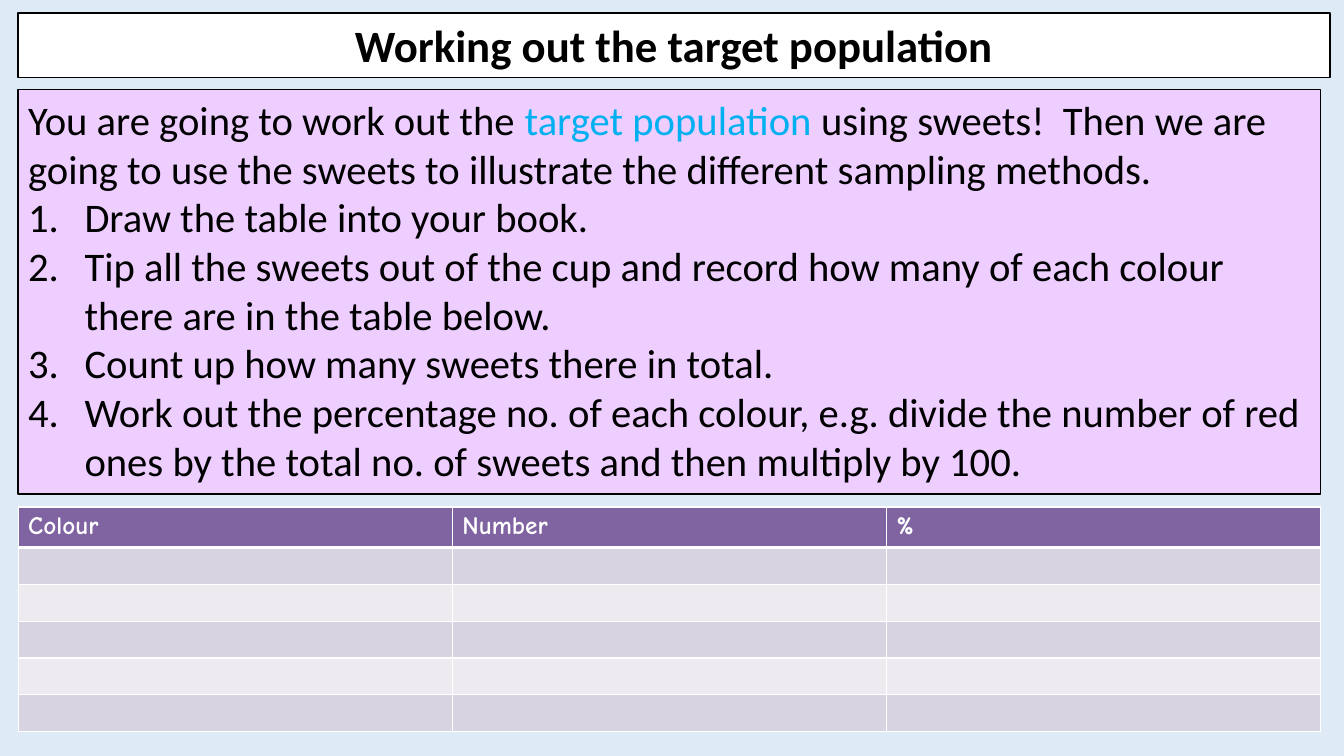
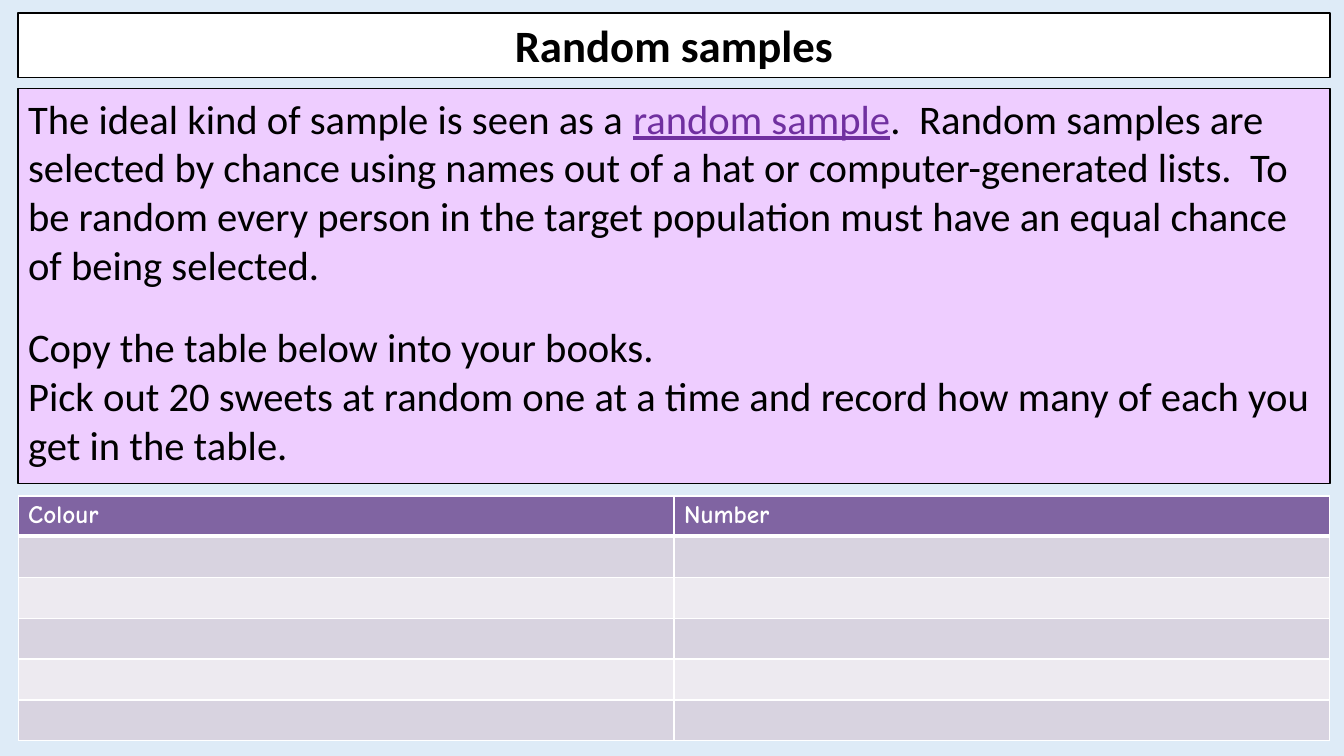
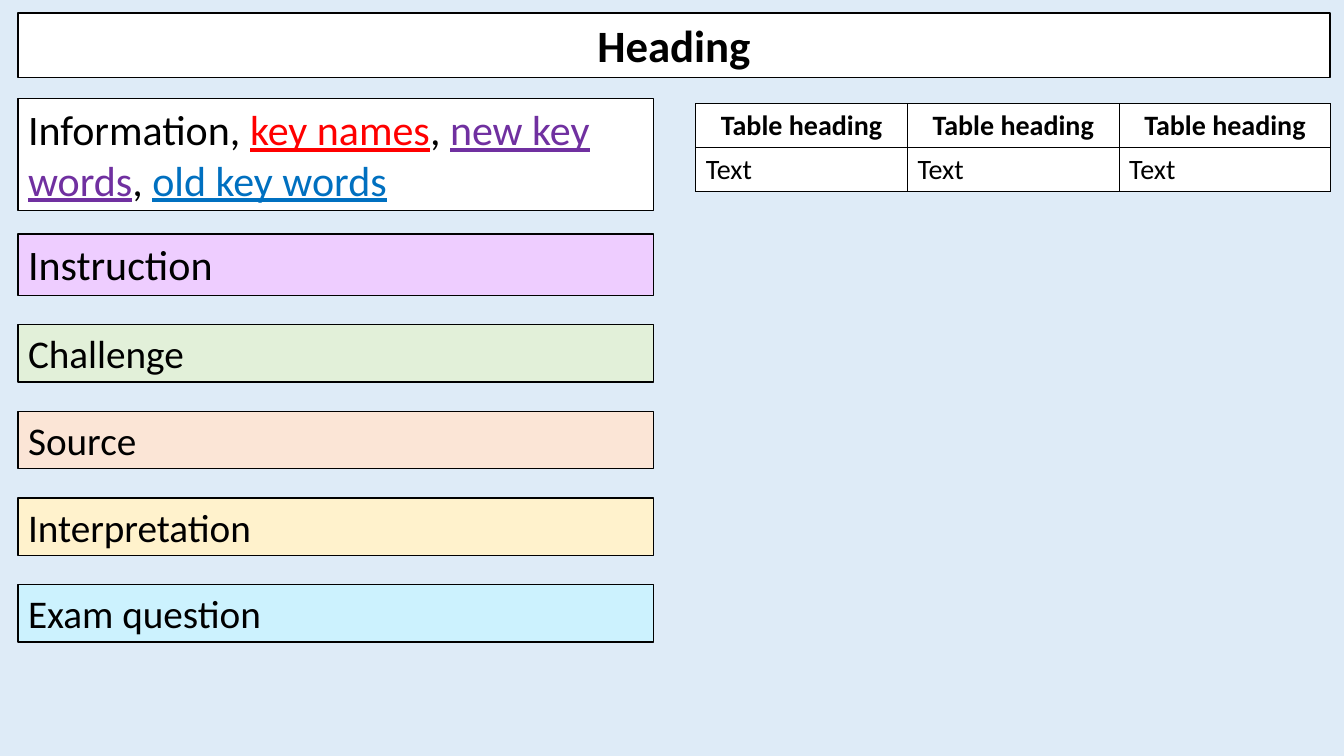
from lxml import etree
from pptx import Presentation, util as u
from pptx.dml import color
from pptx.enum import text as t
from pptx.oxml import ns

BLACK, WHITE = "000000", "FFFFFF"
BACKDROP = "DEEBF7"
LILAC = "EECDFF"
VIOLET, NEW_WORD, OLD_WORD, NAME = "8064A2", "7030A0", "0070C0", "FF0000"
STRIPES = ("D8D3E0", "EDEAF0")
BODY_FONT, TABLE_FONT = "Calibri", "Comic Neue"
LEFT, FULL_WIDTH = 0.18, 13.01


def paint(fill, hex_colour):
    fill.solid()
    fill.fore_color.rgb = color.RGBColor.from_string(hex_colour)


def inches(box):
    return [u.Inches(length) for length in box]


def add_run(paragraph, words, size, hex_colour=BLACK, underline=False,
            bold=False, font=BODY_FONT):
    run = paragraph.add_run()
    run.text = words
    run.font.name = font
    run.font.size = u.Pt(size)
    run.font.bold = bold
    run.font.underline = underline
    paint(run.font.fill, hex_colour)


def number(paragraph, indent=0.56):
    properties = paragraph._p.get_or_add_pPr()
    properties.set("marL", str(u.Inches(indent)))
    properties.set("indent", str(-u.Inches(indent)))
    etree.SubElement(properties, ns.qn("a:buAutoNum"), type="arabicPeriod")


def panel(slide, box, fill, size, paragraphs, bold=False, align=t.PP_ALIGN.LEFT):
    holder = slide.shapes.add_textbox(*inches(box))
    paint(holder.fill, fill)
    paint(holder.line.fill, BLACK)
    holder.line.width = u.Pt(1)
    frame = holder.text_frame
    frame.word_wrap = True
    frame.auto_size = t.MSO_AUTO_SIZE.SHAPE_TO_FIT_TEXT
    for index, runs in enumerate(paragraphs):
        paragraph = frame.add_paragraph() if index else frame.paragraphs[0]
        paragraph.alignment = align
        for words, *style in runs:
            add_run(paragraph, words, size, *style, bold=bold)
    return frame


def border(cell, hex_colour, top=1, bottom=1):
    properties = cell._tc.get_or_add_tcPr()
    for side, points in (("L", 1), ("R", 1), ("T", top), ("B", bottom)):
        line = etree.SubElement(properties, ns.qn("a:ln" + side), w=str(u.Pt(points)))
        solid = etree.SubElement(line, ns.qn("a:solidFill"))
        etree.SubElement(solid, ns.qn("a:srgbClr"), val=hex_colour)


def grid(slide, box, columns, row_heights):
    table = slide.shapes.add_table(len(row_heights), columns, *inches(box)).table
    table.horz_banding = False
    for row, height in zip(table.rows, row_heights):
        row.height = u.Inches(height)
    return table


def tally_table(slide, box, headings, header_height=0.4, blank_rows=5):
    blank_height = (box[3] - header_height) / blank_rows
    table = grid(slide, box, len(headings), [header_height] + [blank_height] * blank_rows)
    for column, heading in enumerate(headings):
        header = table.cell(0, column)
        border(header, WHITE, bottom=3)
        paint(header.fill, VIOLET)
        add_run(header.text_frame.paragraphs[0], heading, 18, WHITE,
                bold=True, font=TABLE_FONT)
        for row in range(1, blank_rows + 1):
            blank = table.cell(row, column)
            blank.margin_top = blank.margin_bottom = 0
            border(blank, WHITE, top=3 if row == 1 else 1)
            paint(blank.fill, STRIPES[(row - 1) % 2])


def sample_table(slide, box, columns=3):
    rows = (("Table heading", True, t.PP_ALIGN.CENTER), ("Text", False, t.PP_ALIGN.LEFT))
    table = grid(slide, box, columns, [box[3] / len(rows)] * len(rows))
    for row, (words, bold, align) in enumerate(rows):
        for column in range(columns):
            cell = table.cell(row, column)
            border(cell, BLACK)
            paint(cell.fill, WHITE)
            paragraph = cell.text_frame.paragraphs[0]
            paragraph.alignment = align
            add_run(paragraph, words, 20, bold=bold)


def colour_key(slide, box, gap=0.29):
    left, top, width, _ = box
    panel(slide, (left, top, width, 1.11), WHITE, 30, [[
        ("Information, ",), ("key names", NAME, True),
        (", ",), ("new key words", NEW_WORD, True),
        (", ",), ("old key words", OLD_WORD, True)]])
    top += 1.34
    for label, fill, size, height in (
            ("Instruction", LILAC, 30, 0.61),
            ("Challenge", "E2F0D9", 28, 0.57),
            ("Source", "FBE5D6", 28, 0.57),
            ("Interpretation", "FFF2CC", 28, 0.57),
            ("Exam question", "CCF2FE", 28, 0.57)):
        panel(slide, (left, top, width, height), fill, size, [[(label,)]])
        top += height + gap


def titled_slide(deck, title):
    slide = deck.slides.add_slide(deck.slide_layouts[6])
    panel(slide, (LEFT, 0.13, FULL_WIDTH, 0.64), WHITE, 32, [[(title,)]],
          bold=True, align=t.PP_ALIGN.CENTER)
    return slide


def population_slide(deck):
    slide = titled_slide(deck, "Working out the target population")
    steps = (
        "Draw the table into your book.",
        "Tip all the sweets out of the cup and record how many of each colour "
        "there are in the table below.",
        "Count up how many sweets there in total.",
        "Work out the percentage no. of each colour, e.g. divide the number of red "
        "ones by the total no. of sweets and then multiply by 100.")
    introduction = [
        ("You are going to work out the ",),
        ("target population ", "00B0F0"),
        ("using sweets!  Then we are going to use the sweets to illustrate "
         "the different sampling methods.",)]
    task = panel(slide, (LEFT, 0.89, 12.92, 4.01), LILAC, 29,
                 [introduction] + [[(step,)] for step in steps])
    for step in task.paragraphs[1:]:
        number(step)
    tally_table(slide, (LEFT, 5.03, 12.92, 2.23), ("Colour", "Number", "%"))


def random_slide(deck):
    slide = titled_slide(deck, "Random samples")
    task = panel(slide, (LEFT, 0.88, FULL_WIDTH, 3.92), LILAC, 29, [
        [("The ideal kind of sample is seen as a ",),
         ("random sample", NEW_WORD, True),
         (".  Random samples are selected by chance using names out of a hat or "
          "computer-generated lists.  To be random every person in the target "
          "population must have an equal chance of being selected.",)],
        [("Copy the table below into your books.",)],
        [("Pick out 20 sweets at random one at a time and record how many of each "
          "you get in the table.",)]])
    task.paragraphs[1].space_before = u.Pt(24)
    tally_table(slide, (LEFT, 4.92, FULL_WIDTH, 2.43), ("Colour", "Number"))


def key_slide(deck):
    slide = titled_slide(deck, "Heading")
    colour_key(slide, (LEFT, 0.98, 6.3, 5.39))
    sample_table(slide, (6.9, 1.03, 6.3, 0.87))


def main():
    deck = Presentation()
    deck.slide_width, deck.slide_height = inches((13.33, 7.5))
    paint(deck.slide_master.background.fill, BACKDROP)
    population_slide(deck)
    random_slide(deck)
    key_slide(deck)
    deck.save("out.pptx")


if __name__ == "__main__":
    main()
